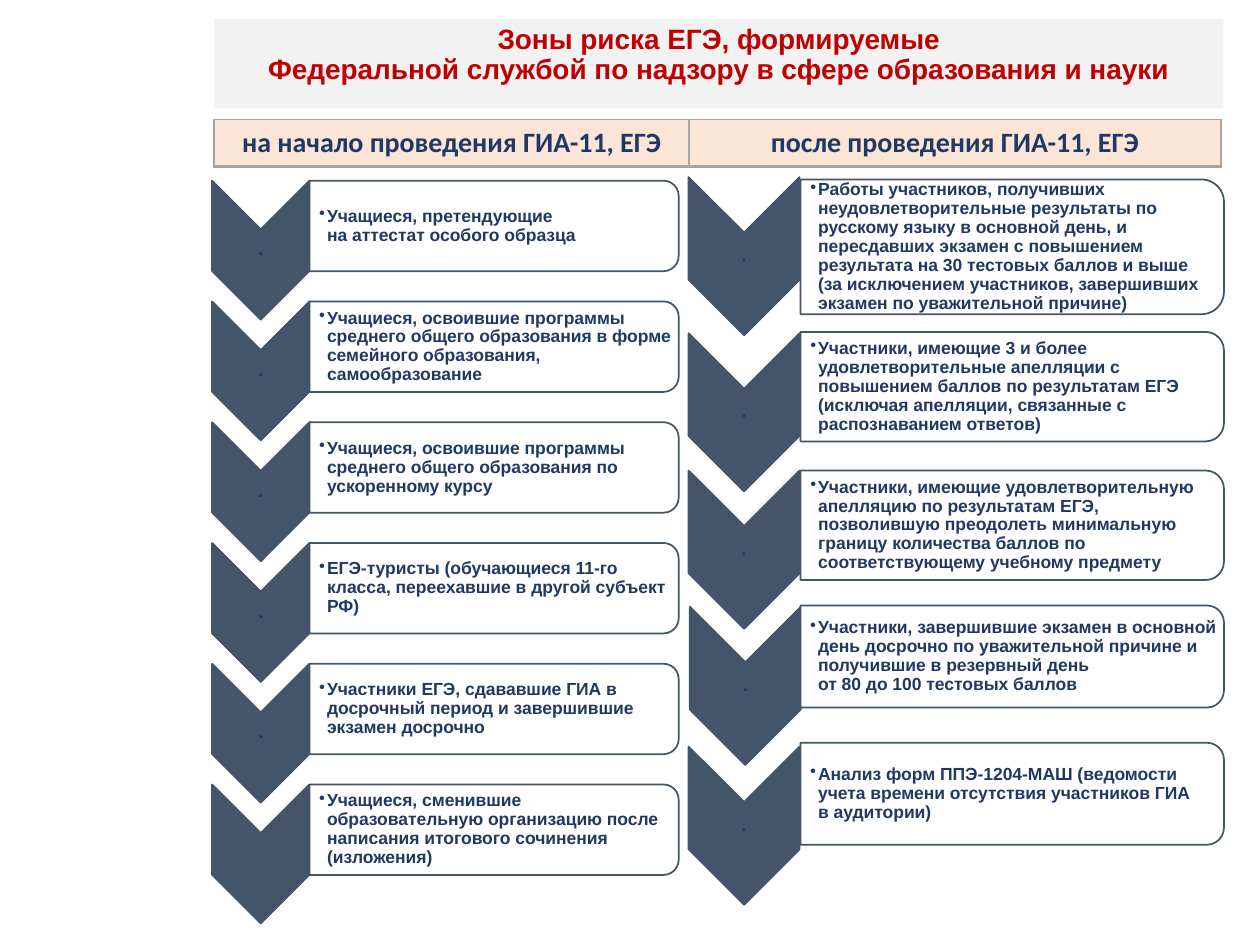
from lxml import etree
from pptx import Presentation
from pptx.dml.color import RGBColor
from pptx.enum.shapes import MSO_SHAPE
from pptx.enum.text import MSO_ANCHOR, PP_ALIGN
from pptx.oxml.ns import qn
from pptx.util import Pt

CHEVRON = MSO_SHAPE.CHEVRON
ROUND = MSO_SHAPE.ROUND_2_SAME_RECTANGLE
RECT = MSO_SHAPE.RECTANGLE
CENTER, LEFT = PP_ALIGN.CENTER, PP_ALIGN.LEFT
TOP, MIDDLE = MSO_ANCHOR.TOP, MSO_ANCHOR.MIDDLE

SLATE = RGBColor(0x44, 0x54, 0x6A)
NAVY = RGBColor(0x20, 0x38, 0x64)
RED = RGBColor(0xC0, 0x00, 0x00)
PALE = RGBColor(0xF2, 0xF2, 0xF2)
PEACH = RGBColor(0xFB, 0xE5, 0xD6)
GRAY = RGBColor(0xA5, 0xA5, 0xA5)
WHITE = RGBColor(0xFF, 0xFF, 0xFF)

TITLE = ("Зоны риска ЕГЭ, формируемые\n"
         "Федеральной службой по надзору в сфере образования и науки")
HEADS = ["на начало проведения ГИА-11, ЕГЭ", "после проведения ГИА-11, ЕГЭ"]
BEFORE = [
    "Учащиеся, претендующие\nна аттестат особого образца",
    "Учащиеся, освоившие программы среднего общего образования в форме "
    "семейного образования, самообразование",
    "Учащиеся, освоившие программы среднего общего образования по "
    "ускоренному курсу",
    "ЕГЭ-туристы (обучающиеся 11-го класса, переехавшие в другой субъект РФ)",
    "Участники ЕГЭ, сдававшие ГИА в досрочный период и завершившие "
    "экзамен досрочно",
    "Учащиеся, сменившие образовательную организацию после написания "
    "итогового сочинения (изложения)",
]
# Chevron left and top, box top and height, text
AFTER = [
    (393.5, 101.2, 102.6, 77,
     "Работы участников, получивших неудовлетворительные результаты по "
     "русскому языку в основной день, и пересдавших экзамен с повышением "
     "результата на 30 тестовых баллов и выше (за исключением участников, "
     "завершивших экзамен по уважительной причине)"),
    (393.5, 190.4, 189.7, 62.6,
     "Участники, имеющие 3 и более удовлетворительные апелляции с повышением "
     "баллов по результатам ЕГЭ (исключая апелляции, связанные с "
     "распознаванием ответов)"),
    (393.5, 268.9, 268.9, 62.6,
     "Участники, имеющие удовлетворительную апелляцию по результатам ЕГЭ, "
     "позволившую преодолеть минимальную границу количества баллов по "
     "соответствующему учебному предмету"),
    (394.2, 346.7, 346, 58.3,
     "Участники, завершившие экзамен в основной день досрочно по уважительной "
     "причине и получившие в резервный день\nот 80 до 100 тестовых баллов"),
    (393.5, 426.6, 424.4, 58.3,
     "Анализ форм ППЭ-1204-МАШ (ведомости учета времени отсутствия "
     "участников ГИА\nв аудитории)"),
]


def write(frame, text, size=10, font="Arial", color=NAVY, align=LEFT,
          anchor=MIDDLE, pads=(0.9, 0.9, 0.9, 0.9), space=0.9, bullet=False):
    """Fill a text frame; pads are left, top, right and bottom."""
    frame.word_wrap = True
    frame.vertical_anchor = anchor
    (frame.margin_left, frame.margin_top,
     frame.margin_right, frame.margin_bottom) = map(Pt, pads)
    para = frame.paragraphs[0]
    para.text = text
    para.alignment = align
    para.line_spacing = space
    if bullet:
        para.level = 1
        props = para._p.get_or_add_pPr()
        props.set("marL", str(Pt(4.5)))
        props.set("indent", str(-Pt(4.5)))
        etree.SubElement(props, qn("a:buChar"), char="•")
    for run in para.runs:
        run.font.size = Pt(size)
        run.font.name = font
        run.font.bold = True
        run.font.color.rgb = color


class Board:
    def __init__(self, deck):
        self.slide = deck.slides.add_slide(deck.slide_layouts[6])
        self.shapes = self.slide.shapes
        self.edge = SLATE

    def shape(self, kind, x, y, w, h, fill, line=True):
        item = self.shapes.add_shape(kind, Pt(x), Pt(y), Pt(w), Pt(h))
        item.shadow.inherit = False
        item.fill.solid()
        item.fill.fore_color.rgb = fill
        if line:
            item.line.color.rgb = self.edge
            item.line.width = Pt(1)
        else:
            item.line.fill.background()
        return item

    def turned(self, kind, x, y, w, h, fill):
        """Place a shape turned by 90 degrees so that it covers x, y, w, h."""
        shift = (w - h) / 2
        item = self.shape(kind, x + shift, y - shift, h, w, fill)
        item.rotation = 90
        return item

    def text(self, x, y, w, h, words, **form):
        box = self.shapes.add_textbox(Pt(x), Pt(y), Pt(w), Pt(h))
        write(box.text_frame, words, **form)

    def title(self, x, y, w, h, words):
        bar = self.shape(RECT, x, y, w, h, PALE, line=False)
        write(bar.text_frame, words, size=16, color=RED, align=CENTER,
              anchor=TOP, pads=(7.2, 3.6, 7.2, 3.6))

    def arrow(self, x, y, w, h, dot=True):
        self.turned(CHEVRON, x, y, w, h, SLATE)
        if dot:
            self.text(x, y + w / 2, w, h - w, ".", align=CENTER)

    def card(self, x, y, w, h, words):
        card = self.turned(ROUND, x, y, w, h, WHITE)
        tint = card.fill._xPr.find(".//" + qn("a:srgbClr"))
        etree.SubElement(tint, qn("a:alpha"), val="90000")
        gap = 0.05 * h
        self.text(x, y + gap, w - gap, h - 2 * gap, words,
                  pads=(5.6, 0.9, 0.9, 0.9), bullet=True)

    def table(self, x, y, widths, h, heads):
        frame = self.shapes.add_table(1, len(heads), Pt(x), Pt(y),
                                      Pt(sum(widths)), Pt(h))
        grid = frame.table
        grid.rows[0].height = Pt(h)
        for col, (wide, head) in enumerate(zip(widths, heads)):
            grid.columns[col].width = Pt(wide)
            self.cell(grid.cell(0, col), head)

    def cell(self, cell, words):
        write(cell.text_frame, words, size=16, font="Calibri", align=CENTER,
              space=1.0)
        cell.vertical_anchor = TOP
        cell.margin_left = cell.margin_right = Pt(7.2)
        cell.margin_top = cell.margin_bottom = Pt(3.6)
        props = cell._tc.get_or_add_tcPr()
        for side, width in (("L", 1), ("R", 1), ("T", 1), ("B", 2)):
            line = etree.SubElement(props, qn("a:ln" + side), w=str(Pt(width)))
            fill = etree.SubElement(line, qn("a:solidFill"))
            etree.SubElement(fill, qn("a:srgbClr"), val=str(GRAY))
        cell.fill.solid()
        cell.fill.fore_color.rgb = PEACH


def main():
    deck = Presentation()
    deck.slide_width, deck.slide_height = Pt(720), Pt(540)
    board = Board(deck)
    board.title(122.4, 10.8, 576.7, 51.1, TITLE)
    for row, words in enumerate(BEFORE):
        y = 103.3 + 69 * row
        board.arrow(121.2, y, 55.6, 79.4, dot=row < len(BEFORE) - 1)
        board.card(176.8, y, 211, 51.7, words)
    board.table(122.4, 68.4, (271.4, 303.8), 26.6, HEADS)
    for x, y, top, high, words in AFTER:
        board.arrow(x, y, 63.4, 90.4)
        board.card(457.4, top, 242, high, words)
    deck.save("out.pptx")


if __name__ == "__main__":
    main()
